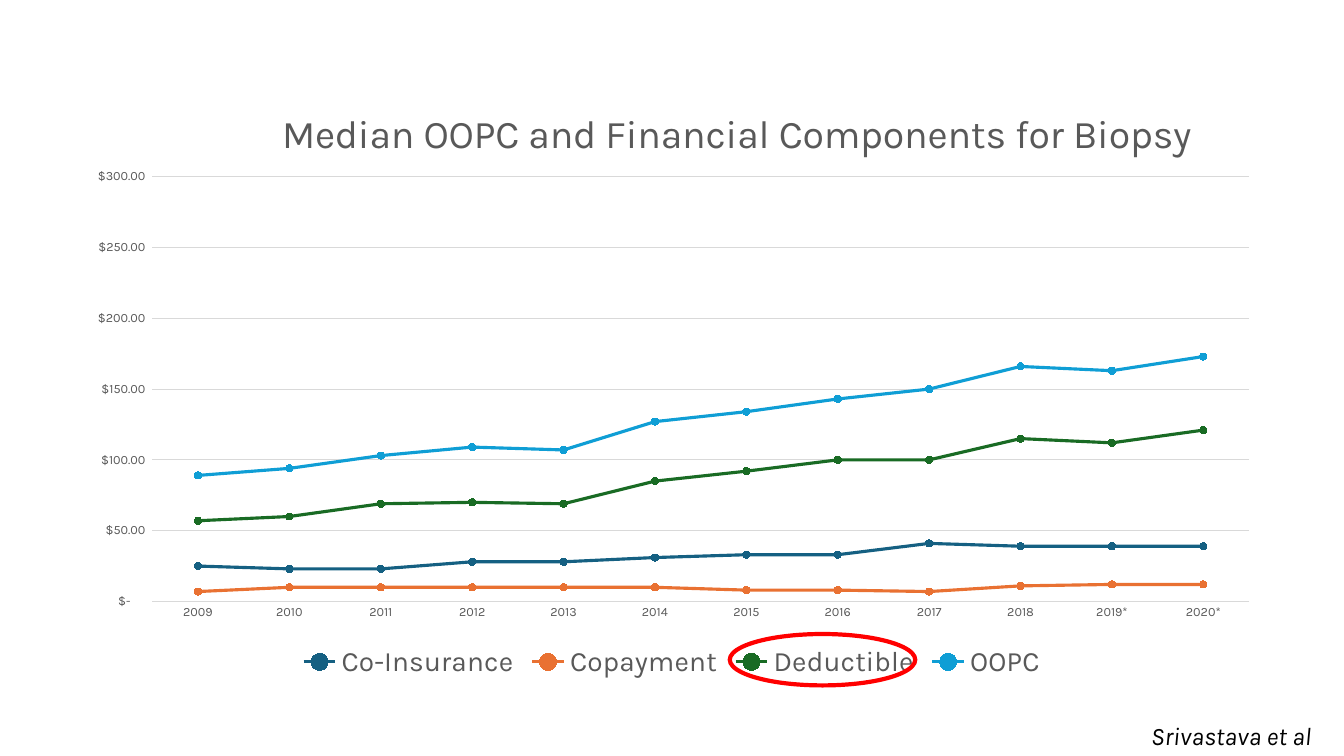
from dataclasses import dataclass

from lxml.etree import SubElement
from pptx import Presentation
from pptx.chart.chart import Chart
from pptx.chart.data import CategoryChartData as Data
from pptx.dml.color import RGBColor as Rgb
from pptx.dml.line import LineFormat as Line
from pptx.enum.chart import XL_CHART_TYPE as Kind
from pptx.enum.chart import XL_LEGEND_POSITION as Side
from pptx.enum.chart import XL_MARKER_STYLE as Mark
from pptx.enum.chart import XL_TICK_MARK as Tick
from pptx.enum.shapes import MSO_SHAPE as Form
from pptx.oxml.ns import qn
from pptx.slide import Slide
from pptx.text.text import Font, TextFrame
from pptx.util import Pt

HUES = {
    "navy": "156082",
    "orange": "E97132",
    "green": "196B24",
    "blue": "0F9ED5",
    "grey": "595959",
    "rule": "D9D9D9",
    "red": "FF0000",
    "black": "000000",
}
FACE = "Karla"
MONEY = '_("$"* #,##0.00_);_("$"* \\(#,##0.00\\);_("$"* "-"??_);_(@_)'
YEARS = [str(year) for year in range(2009, 2019)] + ["2019*", "2020*"]


@dataclass(frozen=True)
class Cost:
    name: str
    hue: str
    vals: tuple[int, ...]


COSTS = (
    Cost("Co-Insurance", "navy", (25, 23, 23, 28, 28, 31, 33, 33, 41, 39, 39, 39)),
    Cost("Copayment", "orange", (7, 10, 10, 10, 10, 10, 8, 8, 7, 11, 12, 12)),
    Cost("Deductible", "green", (57, 60, 69, 70, 69, 85, 92, 100, 100, 115, 112, 121)),
    Cost("OOPC", "blue", (89, 94, 103, 109, 107, 127, 134, 143, 150, 166, 163, 173)),
)


def tint(hue: str) -> Rgb:
    return Rgb.from_string(HUES[hue])


def style(font: Font, size: float, hue: str = "grey", italic: bool = False) -> None:
    font.name = FACE
    font.size = Pt(size)
    font.bold = False
    font.italic = italic
    font.color.rgb = tint(hue)


def write(frame: TextFrame, text: str, **form) -> None:
    run = frame.paragraphs[0].add_run()
    run.text = text
    style(run.font, **form)


def stroke(line: Line, hue: str, width: float) -> None:
    line.color.rgb = tint(hue)
    line.width = Pt(width)


def place(node, index: int, **spots: str) -> None:
    for old in node.findall(qn("c:layout")):
        node.remove(old)
    layout = SubElement(node, qn("c:layout"))
    node.insert(index, layout)
    manual = SubElement(layout, qn("c:manualLayout"))
    for tag, val in spots.items():
        SubElement(manual, qn(f"c:{tag}")).set("val", val)


def draw_cost(series, cost: Cost) -> None:
    series.smooth = False
    stroke(series.format.line, cost.hue, 2.25)
    mark = series.marker
    mark.style = Mark.CIRCLE
    mark.size = 5
    mark.format.fill.solid()
    mark.format.fill.fore_color.rgb = tint(cost.hue)
    stroke(mark.format.line, cost.hue, 0.75)


def draw_axes(chart: Chart) -> None:
    years, money = chart.category_axis, chart.value_axis
    for axis in (years, money):
        axis.major_tick_mark = axis.minor_tick_mark = Tick.NONE
        style(axis.tick_labels.font, 9)
    stroke(years.format.line, "rule", 0.75)
    money.format.line.fill.background()
    money.minimum_scale, money.maximum_scale, money.major_unit = 0, 300, 50
    money.has_major_gridlines = True
    stroke(money.major_gridlines.format.line, "rule", 0.75)
    money.tick_labels.number_format = MONEY
    money.tick_labels.number_format_is_linked = False


def draw_chart(slide: Slide) -> None:
    data = Data(number_format=MONEY)
    data.categories = YEARS
    for cost in COSTS:
        data.add_series(cost.name, cost.vals)
    box = Pt(50.4), Pt(50.4), Pt(859), Pt(438.5)
    chart = slide.shapes.add_chart(Kind.LINE_MARKERS, *box, data).chart
    style(chart.font, 10, "black")
    chart.plots[0].vary_by_categories = False
    for series, cost in zip(chart.plots[0].series, COSTS):
        draw_cost(series, cost)
    draw_axes(chart)

    chart.has_title = True
    title = chart.chart_title
    write(title.text_frame, "Median OOPC and Financial Components for Biopsy", size=28)
    title.include_in_layout = False
    place(title._element, 1, xMode="edge", yMode="edge", x="0.17", y="0.05")

    chart.has_legend = True
    chart.legend.position = Side.BOTTOM
    chart.legend.include_in_layout = False
    style(chart.legend.font, 20)
    area = chart._chartSpace.find(".//" + qn("c:plotArea"))
    place(area, 0, layoutTarget="inner", xMode="edge", yMode="edge",
          x="0.068", y="0.173", w="0.912", h="0.692")


def draw_ring(slide: Slide) -> None:
    ring = slide.shapes.add_shape(Form.OVAL, Pt(521.3), Pt(452.9), Pt(132.5), Pt(36.7))
    ring.shadow.inherit = False
    ring.fill.background()
    stroke(ring.line, "red", 3)


def draw_credit(slide: Slide) -> None:
    box = slide.shapes.add_textbox(Pt(815), Pt(511.2), Pt(131.8), Pt(28.8))
    box.text_frame.word_wrap = False
    write(box.text_frame, "Srivastava et al", size=18, hue="black", italic=True)


def main() -> None:
    deck = Presentation()
    deck.slide_width, deck.slide_height = Pt(960), Pt(540)
    slide = deck.slides.add_slide(deck.slide_layouts[6])
    draw_chart(slide)
    draw_ring(slide)
    draw_credit(slide)
    deck.save("out.pptx")


if __name__ == "__main__":
    main()
